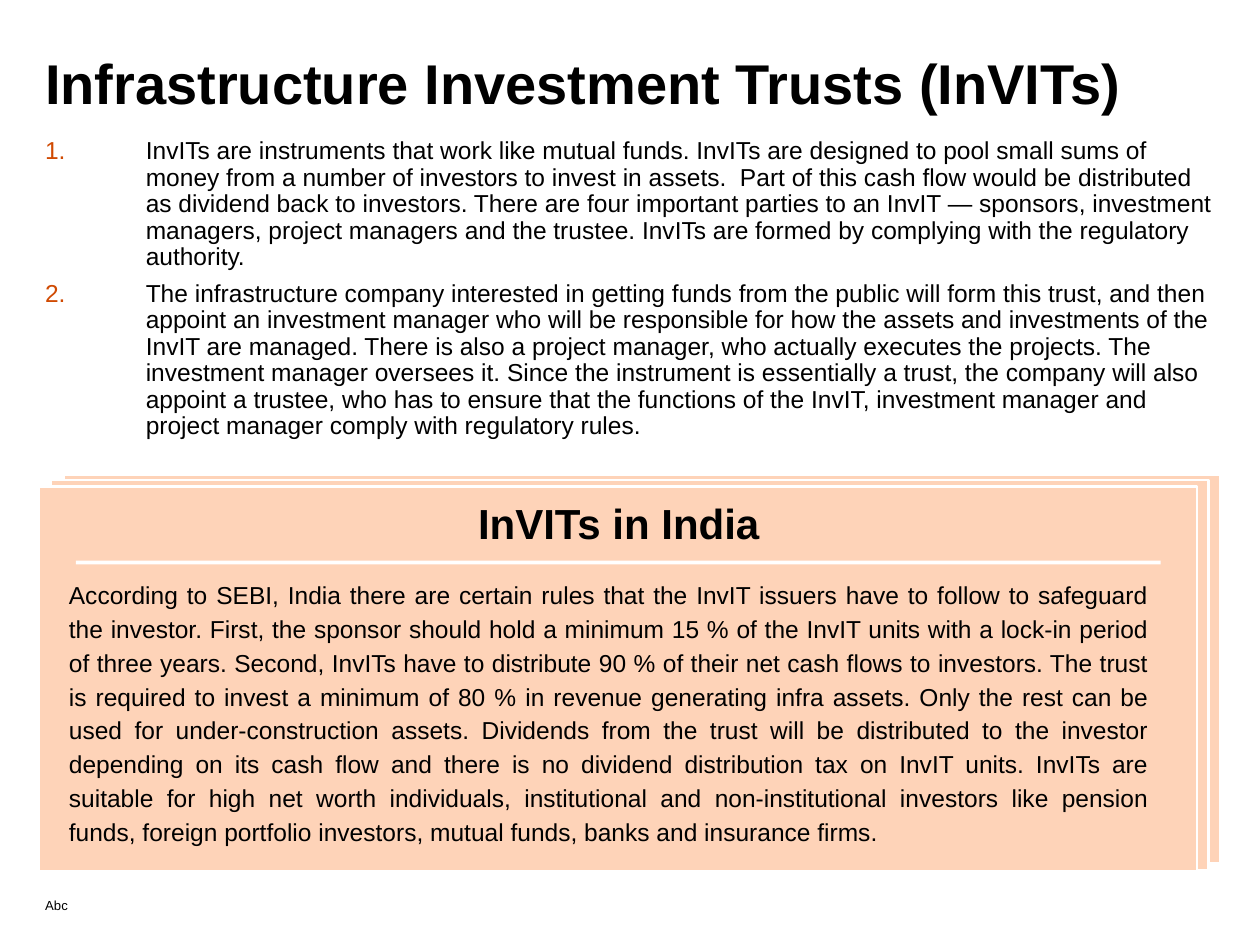
from pptx import Presentation
from pptx.dml.color import RGBColor
from pptx.enum.shapes import MSO_SHAPE
from pptx.enum.text import MSO_ANCHOR, PP_ALIGN
from pptx.oxml.ns import qn
from pptx.util import Cm, Pt
from lxml.etree import SubElement

BLACK, WHITE, PEACH, ORANGE = "000000", "FFFFFF", "FED3B8", "D04A02"
FONT = "Arial"

TITLE = "Infrastructure Investment Trusts (InVITs)"
POINTS = [
    "InvITs are instruments that work like mutual funds. InvITs are designed to pool "
    "small sums of money from a number of investors to invest in assets.  Part of this "
    "cash flow would be distributed as dividend back to investors. There are four "
    "important parties to an InvIT — sponsors, investment managers, project managers and "
    "the trustee. InvITs are formed by complying with the regulatory authority.",
    "The infrastructure company interested in getting funds from the public will form "
    "this trust, and then appoint an investment manager who will be responsible for how "
    "the assets and investments of the InvIT are managed. There is also a project "
    "manager, who actually executes the projects. The investment manager oversees it. "
    "Since the instrument is essentially a trust, the company will also appoint a "
    "trustee, who has to ensure that the functions of the InvIT, investment manager and "
    "project manager comply with regulatory rules.",
]
CARD_HEADING = "InVITs in India"
CARD_BODY = (
    "According to SEBI, India there are certain rules that the InvIT issuers have to "
    "follow to safeguard the investor. First, the sponsor should hold a minimum 15 % of "
    "the InvIT units with a lock-in period of three years. Second, InvITs have to "
    "distribute 90 % of their net cash flows to investors. The trust is required to "
    "invest a minimum of 80 % in revenue generating infra assets. Only the rest can be "
    "used for under-construction assets. Dividends from the trust will be distributed to "
    "the investor depending on its cash flow and there is no dividend distribution tax on "
    "InvIT units. InvITs are suitable for high net worth individuals, institutional and "
    "non-institutional investors like pension funds, foreign portfolio investors, mutual "
    "funds, banks and insurance firms."
)
FOOTER = "Abc"

# Stacked cards, back to front: height and outline width
CARDS = [(7.87, 2.25), (7.87, 1.5), (7.75, 1.5)]
CARD_LEFT, CARD_TOP, CARD_WIDTH = 1.27, 9.55, 23.34
STEP_LEFT, STEP_DOWN = 0.24, 0.13


def color(value):
    return RGBColor.from_string(value)


def add_text(page, area, paragraphs, size, bold=False, align=PP_ALIGN.LEFT,
             spacing=1.0, after=0, inset=(0, 0), anchor=MSO_ANCHOR.TOP):
    """Add a wrapped text box; area and inset (sides, top and bottom) are in cm."""
    box = page.shapes.add_textbox(*map(Cm, area))
    frame = box.text_frame
    frame.word_wrap = True
    frame.vertical_anchor = anchor
    frame.margin_left = frame.margin_right = Cm(inset[0])
    frame.margin_top = frame.margin_bottom = Cm(inset[1])
    frame.text = "\n".join(paragraphs)
    for para in frame.paragraphs:
        para.alignment = align
        para.line_spacing = spacing
        para.space_after = Pt(after)
        for span in para.runs:
            span.font.name = FONT
            span.font.size = Pt(size)
            span.font.bold = bold
            span.font.color.rgb = color(BLACK)
    return box


def number_paragraphs(box, indent):
    for para in box.text_frame.paragraphs:
        props = para._p.get_or_add_pPr()
        props.set("marL", str(indent))
        props.set("indent", str(-indent))
        bullet_color = SubElement(props, qn("a:buClr"))
        SubElement(bullet_color, qn("a:srgbClr"), val=ORANGE)
        SubElement(props, qn("a:buFont"), typeface=FONT)
        SubElement(props, qn("a:buAutoNum"), type="arabicPeriod")


def add_rectangle(page, area, fill, line_width=0):
    shape = page.shapes.add_shape(MSO_SHAPE.RECTANGLE, *map(Cm, area))
    shape.shadow.inherit = False
    shape.fill.solid()
    shape.fill.fore_color.rgb = color(fill)
    if line_width:
        shape.line.color.rgb = color(WHITE)
        shape.line.width = Pt(line_width)
    else:
        shape.line.fill.background()


def main():
    deck = Presentation()
    deck.slide_width, deck.slide_height = Cm(25.4), Cm(19.05)
    page = deck.slides.add_slide(deck.slide_layouts[6])

    add_text(page, (0.91, 18.03, 11.4, 0.38), [FOOTER], 7.5, anchor=MSO_ANCHOR.BOTTOM)
    add_text(page, (0.91, 1.19, 23.55, 1.73), [TITLE], 32, bold=True, spacing=0.85)
    points = add_text(page, (0.91, 2.79, 23.57, 6.5), POINTS, 14, spacing=0.9, after=6)
    number_paragraphs(points, Cm(2.03))

    for index, (height, line_width) in enumerate(CARDS):
        left = CARD_LEFT - index * STEP_LEFT
        top = CARD_TOP + index * STEP_DOWN
        add_rectangle(page, (left, top, CARD_WIDTH, height), PEACH, line_width)
    add_rectangle(page, (1.53, 11.3, 21.87, 0.08), WHITE)

    add_text(page, (1.14, 11.48, 22.28, 5.77), [CARD_BODY], 14, align=PP_ALIGN.JUSTIFY,
             spacing=1.15, inset=(0.25, 0.13))
    add_text(page, (2.95, 10.03, 19.05, 1.02), [CARD_HEADING], 24, bold=True,
             align=PP_ALIGN.CENTER)

    deck.save("out.pptx")


if __name__ == "__main__":
    main()
